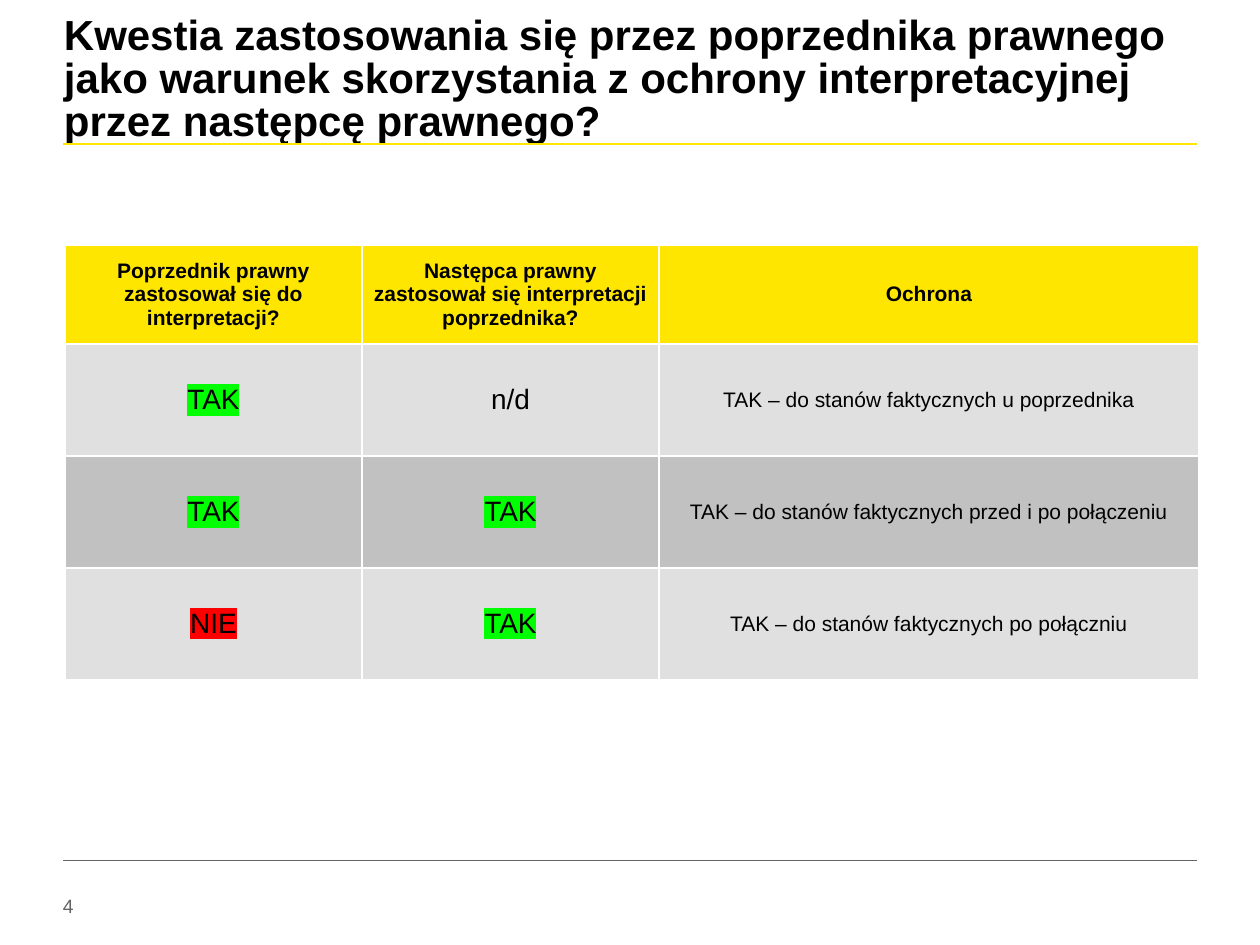
from lxml import etree
from pptx import Presentation
from pptx import util as u
from pptx.dml.color import RGBColor
from pptx.enum import shapes, text
from pptx.oxml import ns

BLACK = RGBColor(0x00, 0x00, 0x00)
WHITE = RGBColor(0xFF, 0xFF, 0xFF)
GREY = RGBColor(0x64, 0x64, 0x64)
YELLOW = RGBColor(0xFF, 0xE6, 0x00)
LIGHT = RGBColor(0xE0, 0xE0, 0xE0)
MEDIUM = RGBColor(0xC1, 0xC1, 0xC1)
GREEN = RGBColor(0x00, 0xFF, 0x00)
RED = RGBColor(0xFF, 0x00, 0x00)

TITLE = ("Kwestia zastosowania się przez poprzednika prawnego jako warunek "
         "skorzystania z ochrony interpretacyjnej przez następcę prawnego?")
HEADINGS = ("Poprzednik prawny zastosował się do interpretacji?",
            "Następca prawny zastosował się interpretacji poprzednika?",
            "Ochrona")
ANSWERS = (("TAK", "n/d", "TAK – do stanów faktycznych u poprzednika"),
           ("TAK", "TAK", "TAK – do stanów faktycznych przed i po połączeniu"),
           ("NIE", "TAK", "TAK – do stanów faktycznych po połączniu"))
HIGHLIGHTS = {"TAK": GREEN, "NIE": RED}
COLUMN_WIDTHS = (297, 297, 540)
HEADING_HEIGHT, ANSWER_HEIGHT = 99, 112


def px(length):
    """Turn px into EMU at 126 px to the inch."""
    return u.Emu(round(length * 914400 / 126))


def add_colour(parent, tag, colour):
    """Append an element that holds one RGB colour."""
    holder = etree.SubElement(parent, ns.qn(tag))
    etree.SubElement(holder, ns.qn("a:srgbClr"), val=str(colour))
    return holder


def write(para, words, size, colour=BLACK, bold=False):
    """Put one run in a paragraph and set the paragraph's font."""
    span = para.add_run()
    span.text = words
    font = para.font
    font.name, font.size, font.bold = "Arial", u.Pt(size), bold
    font.color.rgb = colour
    return span


def add_label(page, box, words, size, colour=BLACK, bold=False, spacing=1.0):
    """Place a text box without insets."""
    frame = page.shapes.add_textbox(*map(px, box)).text_frame
    frame.word_wrap = True
    frame.margin_left = frame.margin_top = 0
    frame.margin_right = frame.margin_bottom = 0
    frame.paragraphs[0].line_spacing = spacing
    write(frame.paragraphs[0], words, size, colour, bold)


def add_rule(page, left, top, width, colour, weight):
    """Draw a horizontal line."""
    rule = page.shapes.add_connector(
        shapes.MSO_CONNECTOR.STRAIGHT,
        px(left), px(top), px(left + width), px(top))
    rule.line.color.rgb = colour
    rule.line.width = u.Pt(weight)
    etree.SubElement(rule._element.spPr, ns.qn("a:effectLst"))


def add_header(page, box):
    """Place the title and the yellow rule below it."""
    left, top, width, height = box
    add_label(page, (left + 1, top, width, height - 9), TITLE, 24,
              bold=True, spacing=0.85)
    add_rule(page, left, top + height, width, YELLOW, 1.5)


def fill_cell(cell, words, size, fill, bold=False):
    """Write, border and fill one table cell."""
    properties = cell._tc.get_or_add_tcPr()
    for side in "LRTB":
        border = etree.SubElement(properties, ns.qn(f"a:ln{side}"),
                                  w=str(u.Pt(1)))
        add_colour(border, "a:solidFill", WHITE)
    cell.fill.solid()
    cell.fill.fore_color.rgb = fill
    cell.vertical_anchor = text.MSO_ANCHOR.MIDDLE
    cell.margin_left = cell.margin_right = px(9)
    cell.margin_top = cell.margin_bottom = 0
    para = cell.text_frame.paragraphs[0]
    para.alignment = text.PP_ALIGN.CENTER
    para.space_after = u.Pt(6)
    span = write(para, words, size, bold=bold)
    if words in HIGHLIGHTS:
        add_colour(span._r.get_or_add_rPr(), "a:highlight", HIGHLIGHTS[words])


def add_protection_table(page, box):
    """Place the table of answers and resulting protection."""
    rows = (HEADINGS,) + ANSWERS
    table = page.shapes.add_table(
        len(rows), len(HEADINGS), *map(px, box)).table
    for column, width in zip(table.columns, COLUMN_WIDTHS):
        column.width = px(width)
    for row, words_in_row in enumerate(rows):
        heading = row == 0
        table.rows[row].height = px(HEADING_HEIGHT if heading else ANSWER_HEIGHT)
        fill = YELLOW if heading else (MEDIUM, LIGHT)[row % 2]
        for column, words in enumerate(words_in_row):
            size = 12 if heading or column == 2 else 16
            fill_cell(table.cell(row, column), words, size, fill, heading)


def add_footer(page, box):
    """Place the thin rule and the page number."""
    left, top, width, height = box
    add_rule(page, left, top, width, GREY, 0.25)
    add_label(page, (left, top + height - 28, 100, 28), "4", 11, GREY)


def main():
    """Build and save the deck."""
    deck = Presentation()
    deck.slide_width, deck.slide_height = px(1260), px(945)
    page = deck.slides.add_slide(deck.slide_layouts[6])
    add_footer(page, (63, 860, 1134, 62))
    add_header(page, (63, 16, 1134, 128))
    add_protection_table(page, (65, 245, sum(COLUMN_WIDTHS),
                                HEADING_HEIGHT + 3 * ANSWER_HEIGHT))
    deck.save("out.pptx")


if __name__ == "__main__":
    main()
